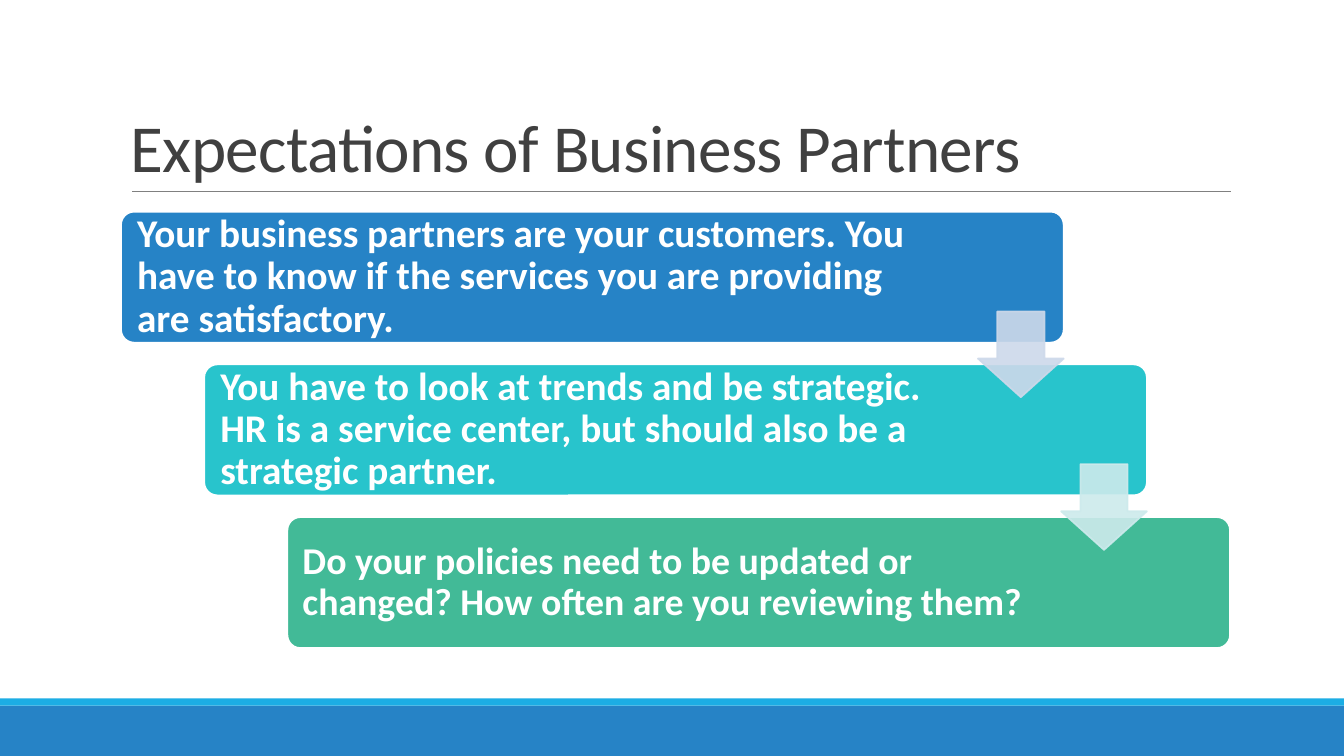
"""Build the slide on the expectations of business partners."""
from dataclasses import dataclass

from lxml import etree
from pptx import Presentation
from pptx import util as u
from pptx.dml.color import RGBColor
from pptx.enum import shapes, text
from pptx.oxml.ns import qn


@dataclass(frozen=True)
class Theme:
    """Colours and type sizes of the deck."""
    font: str = "Calibri"
    title: str = "404040"
    white: str = "FFFFFF"
    rule: str = "808080"
    footer: str = "2683C6"
    stripe: str = "1CADE4"
    steps: tuple = ("2683C6", "28C4CC", "42BA97")
    arrows: tuple = ("CDD9EA", "CDEAEC")
    title_size: float = 48
    step_size: float = 28
    last_step_size: float = 27
    outline: float = 1.25


class SlideBuilder:
    """Draw styled elements on the current slide."""

    def __init__(self, slide, theme):
        self.slide = slide
        self.theme = theme

    def shape(self, kind, box, fill, line=None, adjustments=(), opacity=None):
        """Add a filled preset shape."""
        body = self.slide.shapes.add_shape(kind, *map(u.Inches, box))
        body.shadow.inherit = False
        for index, value in enumerate(adjustments):
            body.adjustments[index] = value
        body.fill.solid()
        body.fill.fore_color.rgb = RGBColor.from_string(fill)
        if line is None:
            body.line.fill.background()
        else:
            body.line.color.rgb = RGBColor.from_string(line)
            body.line.width = u.Pt(self.theme.outline)
        if opacity is not None:
            for color in body._element.spPr.iter(qn("a:srgbClr")):
                etree.SubElement(color, qn("a:alpha")).set("val", str(opacity * 1000))

    def text(self, box, words, size, color, anchor, insets, leading, bold=False, tracking=None):
        """Add a wrapped text box with one paragraph."""
        frame = self.slide.shapes.add_textbox(*map(u.Inches, box)).text_frame
        left, top = map(u.Inches, insets)
        frame_format = {"word_wrap": True, "auto_size": text.MSO_AUTO_SIZE.NONE,
                        "vertical_anchor": anchor, "margin_left": left, "margin_right": left,
                        "margin_top": top, "margin_bottom": top}
        for name, value in frame_format.items():
            setattr(frame, name, value)
        paragraph = frame.paragraphs[0]
        paragraph.line_spacing = leading
        run = paragraph.add_run()
        run.text = words
        for name, value in {"name": self.theme.font, "size": u.Pt(size), "bold": bold}.items():
            setattr(run.font, name, value)
        run.font.color.rgb = RGBColor.from_string(color)
        if tracking is not None:
            run.font._element.set("spc", str(round(tracking * 100)))

    def rule(self, start, end, color, width):
        """Add a thin straight line."""
        line = self.slide.shapes.add_connector(
            shapes.MSO_CONNECTOR.STRAIGHT, *map(u.Inches, (*start, *end)))
        line.line.color.rgb = RGBColor.from_string(color)
        line.line.width = u.Pt(width)
        etree.SubElement(line._element.spPr, qn("a:effectLst"))


def main():
    """Compose and save the slide."""
    theme = Theme()
    deck = Presentation()
    deck.slide_width, deck.slide_height = u.Inches(13.33), u.Inches(7.5)
    page = SlideBuilder(deck.slides.add_slide(deck.slide_layouts[6]), theme)
    kinds = shapes.MSO_SHAPE

    page.shape(kinds.RECTANGLE, (0, 7, 13.33, 0.5), theme.footer)
    page.shape(kinds.RECTANGLE, (0, 6.93, 13.33, 0.07), theme.stripe)
    page.rule((1.31, 1.9), (12.21, 1.9), theme.rule, 0.5)
    page.text((1.2, 0.31, 11, 1.59), "Expectations of Business Partners", theme.title_size,
              theme.title, text.MSO_ANCHOR.BOTTOM, (0.1, 0.05), 0.85, tracking=-0.5)

    steps = (
        ("Your business partners are your customers. You have to know if the services "
         "you are providing are satisfactory.", 7.95, theme.step_size, 0.12),
        ("You have to look at trends and be strategic. HR is a service center, "
         "but should also be a strategic partner.", 7.6, theme.step_size, 0.12),
        ("Do your policies need to be updated or changed? "
         "How often are you reviewing them?", 7.6, theme.last_step_size, 0.11),
    )
    shift, drop, padding = 0.825, 1.515, 0.04
    for index, (words, width, size, inset) in enumerate(steps):
        left, top = 1.2 + index * shift, 2.1 + index * drop
        page.shape(kinds.ROUNDED_RECTANGLE, (left, top, 9.35, 1.3), theme.steps[index],
                   theme.white, (0.1,))
        page.text((left + padding, top + padding, width, 1.22), words, size, theme.white,
                  text.MSO_ANCHOR.MIDDLE, (inset, inset), 0.9, bold=True)
    for index, color in enumerate(theme.arrows):
        page.shape(kinds.DOWN_ARROW, (9.7 + index * shift, 3.09 + index * drop, 0.85, 0.85),
                   color, color, (0.55, 0.45), opacity=90)

    deck.save("out.pptx")


if __name__ == "__main__":
    main()
